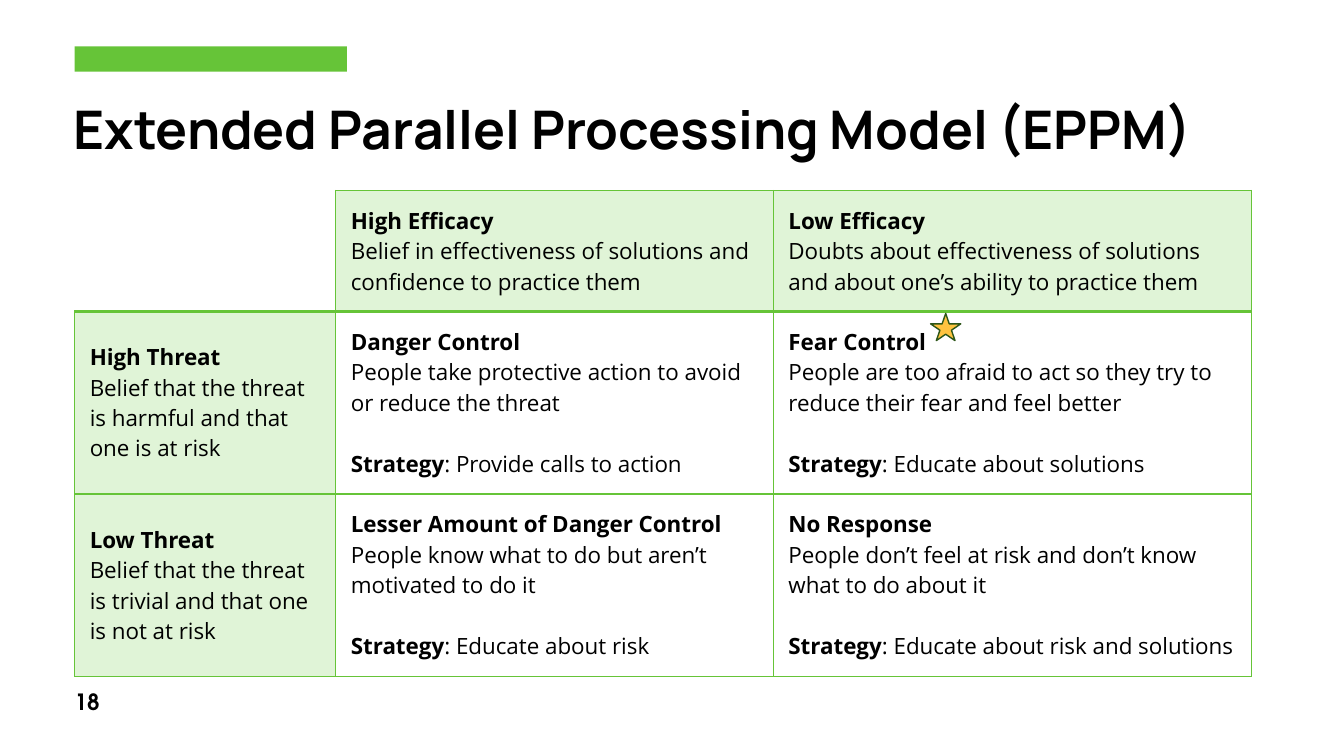
from lxml import etree
from pptx import Presentation
from pptx.dml.color import RGBColor
from pptx.enum.shapes import MSO_SHAPE as SHAPE
from pptx.enum.text import MSO_ANCHOR as ANCHOR
from pptx.oxml.ns import qn
from pptx.util import Inches, Pt

COLORS = {"green": "66C438", "pale": "E0F4D7", "white": "FFFFFF",
          "black": "000000", "gold": "FEC340", "dark": "2D5619"}

# Each cell: heading, description, optional strategy
GRID = [
    [None,
     ("High Efficacy", "Belief in effectiveness of solutions and confidence to practice them"),
     ("Low Efficacy", "Doubts about effectiveness of solutions and about one’s ability to practice them")],
    [("High Threat", "Belief that the threat is harmful and that one is at risk"),
     ("Danger Control", "People take protective action to avoid or reduce the threat",
      "Provide calls to action"),
     ("Fear Control", "People are too afraid to act so they try to reduce their fear and feel better",
      "Educate about solutions")],
    [("Low Threat", "Belief that the threat is trivial and that one is not at risk"),
     ("Lesser Amount of Danger Control", "People know what to do but aren’t motivated to do it",
      "Educate about risk"),
     ("No Response", "People don’t feel at risk and don’t know what to do about it",
      "Educate about risk and solutions")],
]


def rgb(name):
    return RGBColor.from_string(COLORS[name])


class SlideBuilder:
    body = {"name": "Open Sans", "size": Pt(16)}

    def __init__(self, prs):
        self.s = prs.slides.add_slide(prs.slide_layouts[6])

    def run(self, p, text, bold, **font):
        r = p.add_run()
        r.text = text
        for key, value in {**self.body, "bold": bold, **font}.items():
            setattr(r.font, key, value)
        r.font.color.rgb = rgb("black")

    def shape(self, kind, box, fill, line=None):
        sp = self.s.shapes.add_shape(kind, *map(Inches, box))
        sp.shadow.inherit = False
        sp.fill.solid()
        sp.fill.fore_color.rgb = rgb(fill)
        if line:
            sp.line.color.rgb = rgb(line)
            sp.line.width = Pt(1)
        else:
            sp.line.fill.background()

    def text(self, box, text, anchor=ANCHOR.TOP, spacing=1.0, **font):
        tf = self.s.shapes.add_textbox(*map(Inches, box)).text_frame
        frame = {"word_wrap": True, "vertical_anchor": anchor, "margin_left": 0,
                 "margin_right": 0, "margin_top": Inches(0.05), "margin_bottom": Inches(0.05)}
        for key, value in frame.items():
            setattr(tf, key, value)
        p = tf.paragraphs[0]
        p.line_spacing = spacing
        self.run(p, text, True, **font)

    def border(self, cell, side, color, width):
        ln = etree.SubElement(cell._tc.get_or_add_tcPr(), qn(f"a:ln{side}"), w=str(Pt(width)))
        fill = etree.SubElement(ln, qn("a:solidFill"))
        etree.SubElement(fill, qn("a:srgbClr"), val=COLORS[color])

    def cell(self, cell, content, fill):
        for side in ("left", "right", "top", "bottom"):
            setattr(cell, f"margin_{side}", Inches(0.15))
        cell.vertical_anchor = ANCHOR.MIDDLE
        if fill:
            cell.fill.solid()
            cell.fill.fore_color.rgb = rgb(fill)
        else:
            cell.fill.background()
        if not content:
            return
        heading, description, *strategy = content
        tf = cell.text_frame
        self.run(tf.paragraphs[0], heading, True)
        self.run(tf.add_paragraph(), description, False)
        for action in strategy:
            p = tf.add_paragraph()
            p.space_before = Pt(21.8)
            self.run(p, "Strategy", True)
            self.run(p, f": {action}", False)

    def table(self, left, top, widths, heights, grid):
        size = map(Inches, (left, top, sum(widths), sum(heights)))
        tbl = self.s.shapes.add_table(len(heights), len(widths), *size).table
        tbl.first_row = tbl.horz_banding = False
        for col, width in zip(tbl.columns, widths):
            col.width = Inches(width)
        for row, height in zip(tbl.rows, heights):
            row.height = Inches(height)
        for i, row in enumerate(grid):
            for j, content in enumerate(row):
                cell = tbl.cell(i, j)
                for side in "LRTB":
                    color = "white" if not content and side in "LT" else "green"
                    thick = (i, side) in ((0, "B"), (1, "T"))
                    self.border(cell, side, color, 2 if thick else 1)
                header = content and (i == 0 or j == 0)
                self.cell(cell, content, "pale" if header else None)


def main():
    prs = Presentation()
    prs.slide_width, prs.slide_height = Inches(13.33), Inches(7.5)
    b = SlideBuilder(prs)

    # Accent bar, page number and title
    b.shape(SHAPE.RECTANGLE, (0.74, 0.46, 2.7, 0.25), "green")
    b.text((0.74, 6.78, 2.32, 0.37), "18", name="TeX Gyre Adventor")
    b.text((0.73, 0.47, 11.68, 1.18), "Extended Parallel Processing Model (EPPM)",
           ANCHOR.BOTTOM, 0.9, name="Manrope", size=Pt(38))

    # Threat and efficacy matrix
    b.table(0.74, 1.89, (2.59, 4.34, 4.74), (1.2, 1.81, 1.81), GRID)

    # Star beside Fear Control
    b.shape(SHAPE.STAR_5_POINT, (9.23, 3.11, 0.3, 0.27), "gold", "dark")

    prs.save("out.pptx")


if __name__ == "__main__":
    main()
